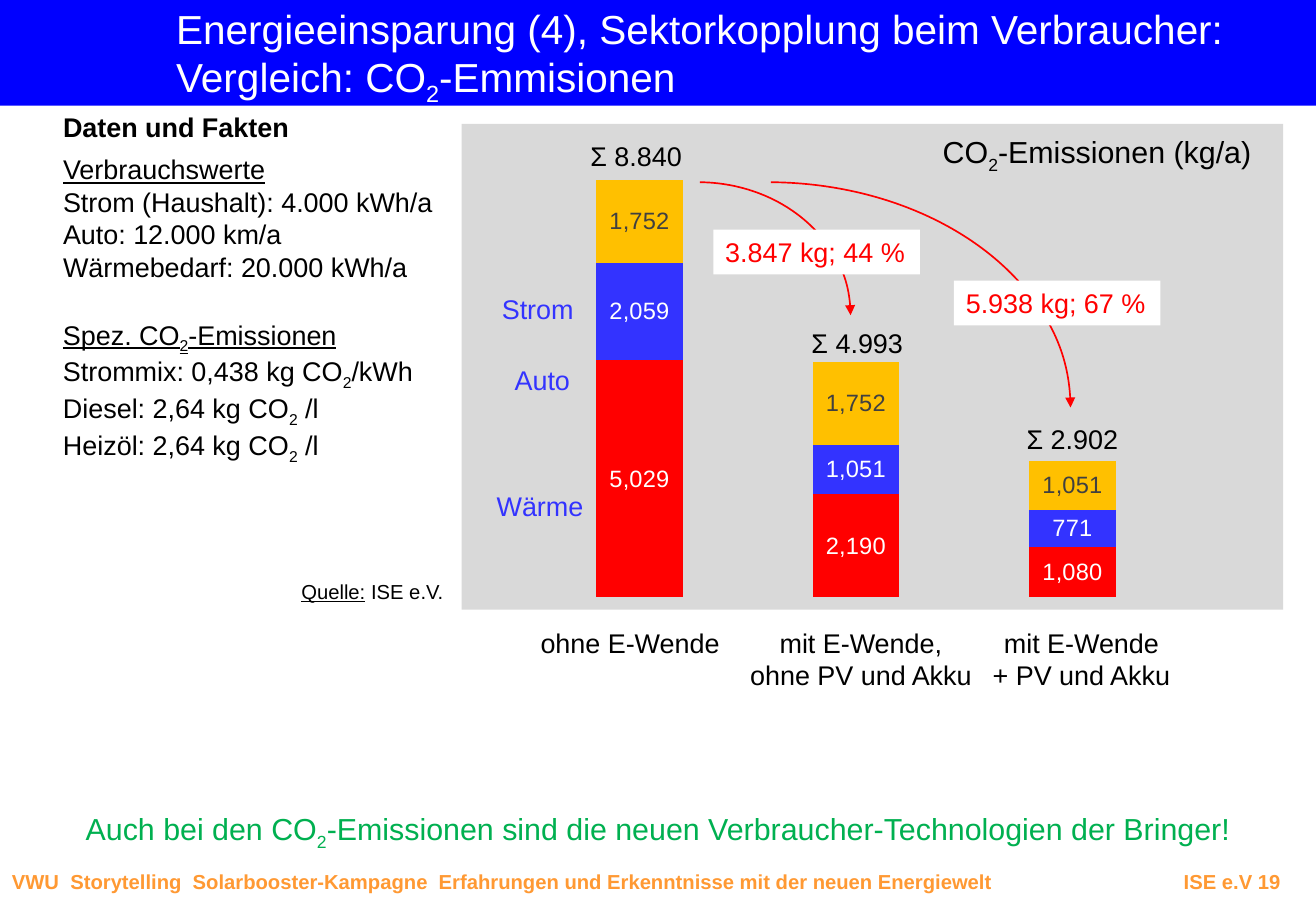
"""Build the slide comparing CO₂ emissions with and without the energy transition."""
import pptx
import pptx.chart.data
import pptx.dml.color
import pptx.enum.chart
import pptx.enum.shapes
import pptx.enum.text
import pptx.oxml
import pptx.util

RGB = pptx.dml.color.RGBColor
BLACK = RGB(0, 0, 0)
WHITE = RGB(255, 255, 255)
BLUE = RGB(0, 0, 255)
RED = RGB(255, 0, 0)
STROM_BLUE = RGB(0x33, 0x33, 0xFF)
AMBER = RGB(0xFF, 0xC0, 0)
DARK_GREY = RGB(0x40, 0x40, 0x40)
PANEL_GREY = RGB(0xD9, 0xD9, 0xD9)
GREEN = RGB(0, 0xB0, 0x50)
ORANGE = RGB(0xFF, 0x99, 0x33)
FONT = "Arial"
LEFT, CENTER, RIGHT = (getattr(pptx.enum.text.PP_ALIGN, side) for side in ("LEFT", "CENTER", "RIGHT"))
SHAPE = pptx.enum.shapes.MSO_SHAPE
DRAWING = 'xmlns:a="http://schemas.openxmlformats.org/drawingml/2006/main"'
CHARTING = 'xmlns:c="http://schemas.openxmlformats.org/drawingml/2006/chart"'

CELL = pptx.util.Inches(0.1)
COLUMNS, ROWS = 108.3, 75

deck = pptx.Presentation()
deck.slide_width, deck.slide_height = int(COLUMNS * CELL), int(ROWS * CELL)
slide = deck.slides.add_slide(deck.slide_layouts[6])


def write(box, text, size, color, align=LEFT, wrap=False, inset=None, bold=None):
    """Fill a box; underscores toggle underlining and ₂ becomes a subscript run."""
    frame = box.text_frame
    frame.word_wrap = wrap
    if inset is not None:
        frame.margin_left = frame.margin_right = int(inset * CELL)
        frame.margin_top = frame.margin_bottom = int(inset * CELL)
    paragraph = frame.paragraphs[0]
    paragraph.alignment = align
    for line_number, line in enumerate(text.split("\n")):
        if line_number:
            paragraph.add_line_break()
        for span_number, span in enumerate(line.split("_")):
            for piece in span.replace("₂", "|₂|").split("|"):
                if not piece:
                    continue
                run = paragraph.add_run()
                run.text = "2" if piece == "₂" else piece
                run.font.name = FONT
                run.font.size = pptx.util.Pt(size)
                run.font.color.rgb = color
                run.font.bold = bold
                run.font.underline = True if span_number % 2 else None
                if piece == "₂":
                    run.font._element.set("baseline", "-25000")
    return paragraph


def place(kind, *cells, fill=None):
    """Add a preset shape, or a text box if kind is None, at grid cells."""
    area = [int(cell * CELL) for cell in cells]
    if kind is None:
        return slide.shapes.add_textbox(*area)
    shape = slide.shapes.add_shape(kind, *area)
    shape.shadow.inherit = False
    shape.line.fill.background()
    if fill is None:
        shape.fill.background()
    else:
        shape.fill.solid()
        shape.fill.fore_color.rgb = fill
    return shape


place(SHAPE.RECTANGLE, 0, 0, COLUMNS, 8.7, fill=BLUE)
write(place(None, 14.5, 0.3, 87.1, 8.1),
      "Energieeinsparung (4), Sektorkopplung beim Verbraucher:\nVergleich: CO₂-Emmisionen",
      24, WHITE, inset=0)

footer = place(None, 0, 71.1, COLUMNS, 3)
footer_line = write(
    footer,
    "VWU | Storytelling | Solarbooster-Kampagne | Erfahrungen und Erkenntnisse"
    " mit der neuen Energiewelt\tISE e.V 19",
    12, ORANGE, wrap=True, bold=True)
footer_line._p.get_or_add_pPr().append(pptx.oxml.parse_xml(
    f'<a:tabLst {DRAWING}><a:tab pos="{int(104.4 * CELL)}" algn="r"/></a:tabLst>'))

write(place(None, 4.2, 8.6, 20.8, 3.7), "Daten und Fakten", 16, BLACK, bold=True)
facts = [
    (12.1, 32.9, "_Verbrauchswerte_\nStrom (Haushalt): 4.000 kWh/a\n"
                 "Auto: 12.000 km/a\nWärmebedarf: 20.000 kWh/a"),
    (25.7, 31.3, "_Spez. CO₂-Emissionen_\nStrommix: 0,438 kg CO₂/kWh\n"
                 "Diesel: 2,64 kg CO₂ /l\nHeizöl: 2,64 kg CO₂ /l"),
]
for top, width, fact in facts:
    write(place(None, 4.2, top, width, 11.8), fact, 16, BLACK)
write(place(None, 24.8, 47.7, 12.3, 2), "_Quelle:_ ISE e.V.", 12, BLACK, inset=0)

place(SHAPE.RECTANGLE, 38, 10.2, 67.6, 40, fill=PANEL_GREY)

emissions = pptx.chart.data.CategoryChartData(number_format="#,##0")
emissions.categories = ["1", "2", "3"]
sectors = [
    ("Series 1", (5029, 2190, 1080), RED, WHITE),
    ("Series 2", (2059, 1051, 771), STROM_BLUE, WHITE),
    ("Series 3", (1752, 1752, 1051), AMBER, DARK_GREY),
]
for name, values, *_ in sectors:
    emissions.add_series(name, values)
chart = slide.shapes.add_chart(
    pptx.enum.chart.XL_CHART_TYPE.COLUMN_STACKED,
    *[int(cell * CELL) for cell in (41.4, 8.3, 58.1, 40.9)], emissions).chart
chart.has_legend = False
chart.has_title = False
chart.font.name = FONT
chart.font.size = pptx.util.Pt(10)
chart.font.color.rgb = BLACK
chart.value_axis.minimum_scale, chart.value_axis.maximum_scale = 0, 10000
chart.value_axis.has_major_gridlines = False
chart.value_axis.visible = False
chart.category_axis.visible = False
bars = chart.plots[0]
bars.gap_width, bars.overlap, bars.vary_by_categories = 150, 100, False
for series, (_, _, fill, label_color) in zip(bars.series, sectors):
    series.format.fill.solid()
    series.format.fill.fore_color.rgb = fill
    labels = series.data_labels
    labels.show_value = True
    labels.number_format, labels.number_format_is_linked = "#,##0", False
    labels.font.name = FONT
    labels.font.size = pptx.util.Pt(14)
    labels.font.color.rgb = label_color
plot_area = chart._chartSpace.chart.plotArea
for old_layout in plot_area.findall(pptx.oxml.ns.qn("c:layout")):
    plot_area.remove(old_layout)
plot_area.insert(0, pptx.oxml.parse_xml(
    f'<c:layout {CHARTING}><c:manualLayout><c:layoutTarget val="inner"/>'
    '<c:xMode val="edge"/><c:yMode val="edge"/><c:x val="0.04"/><c:y val="0.05"/>'
    '<c:w val="0.92"/><c:h val="0.95"/></c:manualLayout></c:layout>'))
chart._chartSpace.chart.addnext(pptx.oxml.parse_xml(
    f'<c:spPr {CHARTING} {DRAWING}><a:noFill/><a:ln><a:noFill/></a:ln></c:spPr>'))

write(place(None, 76.6, 10.5, 30.8, 4), "CO₂-Emissionen (kg/a)", 18, BLACK, wrap=True)
for left, top, width, sector in [
        (39.7, 39.8, 9.3, "Wärme"), (41.3, 29.4, 6.6, "Auto"), (40.2, 23.6, 8, "Strom")]:
    write(place(None, left, top, width, 3.7), sector, 16, STROM_BLUE, RIGHT)
for left, width, height, scenario in [
        (43.4, 16.9, 3.7, "ohne E-Wende"),
        (60.6, 20.5, 6.4, "mit E-Wende,\nohne PV und Akku"),
        (80.6, 16.8, 6.4, "mit E-Wende\n+ PV und Akku")]:
    write(place(None, left, 51.1, width, height), scenario, 16, BLACK, CENTER)
for left, top, total in [(47.6, 11, "Σ 8.840"), (65.8, 26.4, "Σ 4.993"), (83.5, 34.3, "Σ 2.902")]:
    write(place(None, left, top, 9.6, 3.7), total, 16, BLACK)

write(place(None, 0, 66, COLUMNS, 4.4),
      "Auch bei den CO₂-Emissionen sind die neuen Verbraucher-Technologien der Bringer!",
      18, GREEN, CENTER, wrap=True, inset=0.7)

savings = [
    ((44.9, 15, 25.1, 21.9), (58.7, 18.9), "3.847 kg; 44 %"),
    ((38.3, 15, 49.8, 37.1), (78.5, 23.1), "5.938 kg; 67 %"),
]
for arc_cells, label_corner, saving in savings:
    arc = place(SHAPE.ARC, *arc_cells)
    arc.adjustments[0], arc.adjustments[1] = 162.45, 0
    arc.line.color.rgb = RED
    arc.line.width = pptx.util.Pt(1)
    arc.line._get_or_add_ln().append(pptx.oxml.parse_xml(f'<a:tailEnd {DRAWING} type="triangle"/>'))
    write(place(SHAPE.RECTANGLE, *label_corner, 17, 3.7, fill=WHITE), saving, 16, RED)

deck.save("out.pptx")
